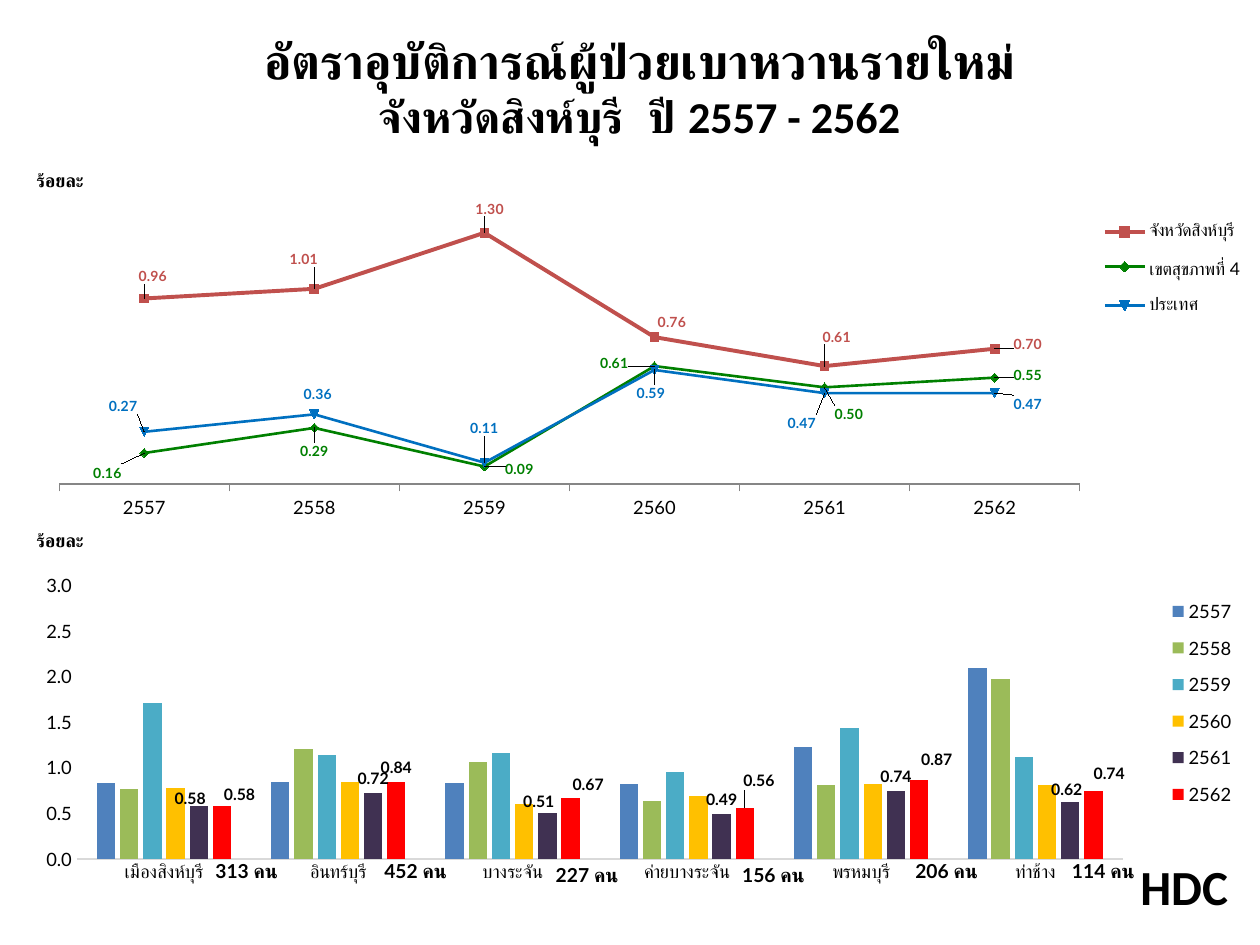
from lxml import etree
from pptx import Presentation
from pptx import util as u
from pptx.chart.data import CategoryChartData
from pptx.dml.color import RGBColor
from pptx.enum import chart as ch
from pptx.enum import text as tx
from pptx.oxml.ns import qn

Pt = u.Pt
LINE_W, LINE_H = 720, 200
BAR_W, BAR_H = 720, 202.5

# Name, colour, line width, values, label offsets from each point (pt)
RATES = [
    ("จังหวัดสิงห์บุรี", "C0504D", 2.25, (0.96, 1.01, 1.30, 0.76, 0.61, 0.70),
     ((5, -13), (-6, -17), (3, -14), (10, -9), (7, -17), (19, -3))),
    ("เขตสุขภาพที่ 4", "008000", 1.5, (0.16, 0.29, 0.09, 0.61, 0.50, 0.55),
     ((-21, 11), (0, 13), (20, 1), (-23, -2), (14, 15), (19, -2))),
    ("ประเทศ", "0070C0", 1.5, (0.27, 0.36, 0.11, 0.59, 0.47, 0.47),
     ((-12, -15), (2, -12), (0, -20), (-2, 13), (-13, 17), (19, 6))),
]
YEARS = ["2557", "2558", "2559", "2560", "2561", "2562"]

DISTRICTS = ["เมืองสิงห์บุรี", "อินทร์บุรี", "บางระจัน",
             "ค่ายบางระจัน", "พรหมบุรี", "ท่าช้าง"]
# Colour, values, label offsets from the top of each bar (pt)
BY_YEAR = [
    ("4F81BD", (0.83, 0.84, 0.83, 0.82, 1.23, 2.09), ()),
    ("9BBB59", (0.77, 1.21, 1.06, 0.64, 0.81, 1.97), ()),
    ("4BACC6", (1.71, 1.14, 1.16, 0.95, 1.44, 1.12), ()),
    ("FFC000", (0.78, 0.84, 0.60, 0.69, 0.82, 0.81), ()),
    ("403152", (0.58, 0.72, 0.51, 0.49, 0.74, 0.62),
     ((-5, 4), (0, 0), (-5, 2), (0, 0), (0, 0), (-2, 1))),
    ("FF0000", (0.58, 0.84, 0.67, 0.56, 0.87, 0.74),
     ((10, 2), (0, 0), (10, 1), (8, -7), (10, -3), (9, -2))),
]
# Patient counts: text, left, top (pt)
COUNTS = [("313 คน", 116, 487.5), ("452 คน", 212.5, 487.5),
          ("227 คน", 310.5, 489.5), ("156 คน", 417, 489.5),
          ("206 คน", 516, 487.5), ("114 คน", 605.5, 487.5)]


def rgb(color):
    return RGBColor.from_string(color)


def style(font, size, color="000000", name="Lato", bold=False):
    font.size, font.name, font.bold = Pt(size), name, bold
    font.color.rgb = rgb(color)


def add_text(s, text, x, y, w, h, sizes=(10.5,), font="Lato", align=None):
    """Bold text box; one paragraph per line, with one size for each."""
    tf = s.shapes.add_textbox(Pt(x), Pt(y), Pt(w), Pt(h)).text_frame
    tf.word_wrap = True
    for i, (line, size) in enumerate(zip(text.split("\n"), sizes)):
        p = tf.add_paragraph() if i else tf.paragraphs[0]
        p.alignment = align
        r = p.add_run()
        r.text = line
        style(r.font, size, name=font, bold=True)


def set_layout(parent, index, **values):
    """Give a chart part a manual layout, as fractions of the chart."""
    for old in parent.findall(qn("c:layout")):
        parent.remove(old)
    layout = etree.Element(qn("c:layout"))
    manual = etree.SubElement(layout, qn("c:manualLayout"))
    for tag, value in values.items():
        etree.SubElement(manual, qn("c:" + tag)).set("val", str(value))
    parent.insert(index, layout)


def box(x, y, w, h):
    return dict(xMode="edge", yMode="edge", x=x, y=y, w=w, h=h)


def add_chart(s, kind, frame, cats, series, plot, legend, legend_size, top):
    """Chart with fixed plot and legend areas and no gridlines."""
    data = CategoryChartData(number_format="0.00")
    data.categories = cats
    for name, values in series:
        data.add_series(name, values)
    chart = s.shapes.add_chart(kind, *map(Pt, frame), data).chart
    style(chart.font, 10.5)
    chart.has_title = False
    chart.has_legend = True
    chart.legend.position = ch.XL_LEGEND_POSITION.RIGHT
    chart.legend.include_in_layout = False
    style(chart.legend.font, legend_size)
    set_layout(chart.legend._element, 1, **box(*legend))
    area = chart.plots[0]._element.getparent()
    set_layout(area, 0, layoutTarget="inner", **box(*plot))
    axis = chart.value_axis
    axis.has_major_gridlines = False
    axis.minimum_scale, axis.maximum_scale = 0, top
    for ax in (axis, chart.category_axis):
        style(ax.tick_labels.font, 10.5)
    return chart


def add_labels(ser, offsets, size, color, position, w, h):
    """Label each point, moved by an offset from the given position."""
    for i, (dx, dy) in enumerate(offsets):
        label = ser.points[i].data_label
        style(label.font, size, color, bold=True)
        label.position = position
        if dx or dy:
            set_layout(label._dLbl, 1, x=round(dx / w, 4), y=round(dy / h, 4))


def add_rate_chart(s):
    chart = add_chart(
        s, ch.XL_CHART_TYPE.LINE_MARKERS, (0, 111.6, LINE_W, LINE_H), YEARS,
        [(name, values) for name, _, _, values, _ in RATES],
        (0.047, 0.052, 0.81, 0.773), (0.868, 0.03, 0.125, 0.36), 10, 1.4)
    chart.value_axis.visible = False
    axis = chart.category_axis
    axis.major_tick_mark = ch.XL_TICK_MARK.OUTSIDE
    axis.format.line.color.rgb = rgb("868686")
    for ser, (_, color, width, _, offsets) in zip(chart.series, RATES):
        ser.smooth = False
        ser.format.line.color.rgb = rgb(color)
        ser.format.line.width = Pt(width)
        ser.marker.style = ch.XL_MARKER_STYLE.AUTOMATIC
        ser.marker.size = 5
        for part in (ser.marker.format.fill, ser.marker.format.line.fill):
            part.solid()
            part.fore_color.rgb = rgb(color)
        add_labels(ser, offsets, 8, color, ch.XL_LABEL_POSITION.CENTER,
                   LINE_W, LINE_H)


def add_district_chart(s):
    chart = add_chart(
        s, ch.XL_CHART_TYPE.COLUMN_CLUSTERED, (13.7, 324.7, BAR_W, BAR_H),
        DISTRICTS, [(y, row[1]) for y, row in zip(YEARS, BY_YEAR)],
        (0.042, 0.048, 0.83, 0.773), (0.905, 0.05, 0.06, 0.66), 10.5, 3)
    plot = chart.plots[0]
    plot.gap_width, plot.overlap, plot.vary_by_categories = 219, -27, False
    axis = chart.value_axis
    axis.major_unit = 0.5
    axis.tick_labels.number_format = "0.0"
    axis.tick_labels.number_format_is_linked = False
    axis.format.line.fill.background()
    chart.category_axis.format.line.color.rgb = rgb("D9D9D9")
    chart.category_axis.format.line.width = Pt(0.75)
    for ax in (axis, chart.category_axis):
        ax.major_tick_mark = ch.XL_TICK_MARK.NONE
    for ser, (color, _, offsets) in zip(chart.series, BY_YEAR):
        ser.format.fill.solid()
        ser.format.fill.fore_color.rgb = rgb(color)
        add_labels(ser, offsets, 9, "000000",
                   ch.XL_LABEL_POSITION.OUTSIDE_END, BAR_W, BAR_H)


def main():
    prs = Presentation()
    prs.slide_width, prs.slide_height = Pt(720), Pt(540)
    s = prs.slides.add_slide(prs.slide_layouts[6])

    # Title
    add_text(s, "อัตราอุบัติการณ์ผู้ป่วยเบาหวานรายใหม่\n"
             "จังหวัดสิงห์บุรี  ปี 2557 - 2562", 21, 14, 689, 72,
             sizes=(27.9, 25.2), font="Calibri", align=tx.PP_ALIGN.CENTER)

    # Charts with their unit captions
    add_rate_chart(s)
    add_district_chart(s)
    for y in (93, 299):
        add_text(s, "ร้อยละ", 13.7, y, 90, 21)

    # Patient counts and data source
    for text, x, y in COUNTS:
        add_text(s, text, x, y, 55, 21, sizes=(11,))
    add_text(s, "HDC", 644.5, 486, 75.5, 41, sizes=(28,), font="Calibri")

    prs.save("out.pptx")


if __name__ == "__main__":
    main()
